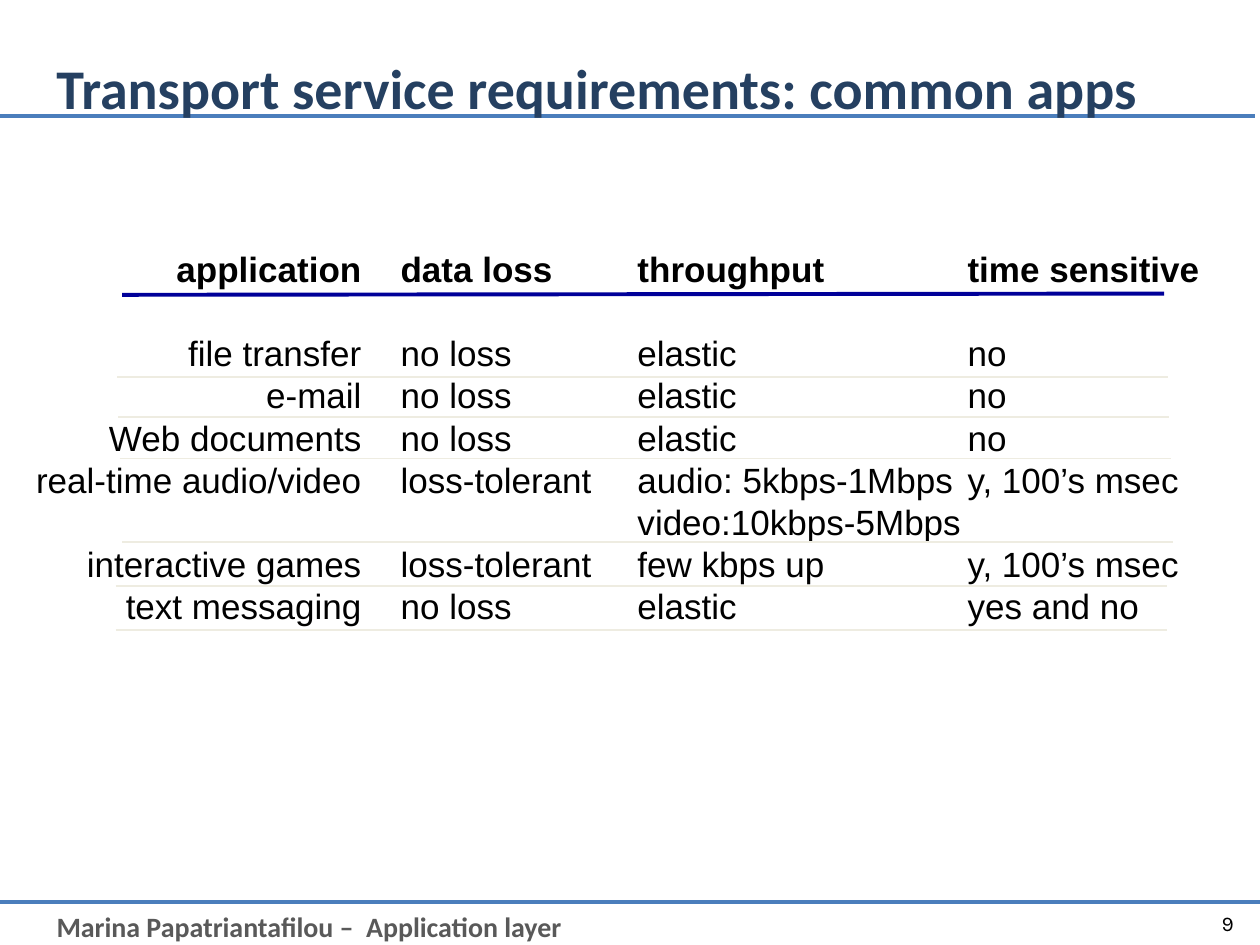
from dataclasses import dataclass

from lxml import etree
from pptx import Presentation
from pptx.dml.color import RGBColor
from pptx.enum.shapes import MSO_CONNECTOR
from pptx.enum.text import MSO_ANCHOR, PP_ALIGN
from pptx.oxml.ns import qn
from pptx.util import Inches, Pt

LEFT, RIGHT = PP_ALIGN.LEFT, PP_ALIGN.RIGHT
TOP, MIDDLE = MSO_ANCHOR.TOP, MSO_ANCHOR.MIDDLE
STRAIGHT = MSO_CONNECTOR.STRAIGHT
NO_STYLE_NO_GRID = "{2D5ABB26-0587-4C30-8999-92F81FD0307C}"

BLACK, TITLE_BLUE, FOOTER_GRAY = "000000", "254061", "595959"
FRAME_BLUE, HEADER_BLUE, ROW_BEIGE = "4B7EBC", "000099", "EEECE1"

LINE_PITCH = 24  # points per line of table text
TABLE_TOP = 1.97
COLUMN_EDGES = [0.16, 3.18, 5.06, 7.68, 9.85]
APPLICATION_GAP = 0.31  # between the right-aligned names and the next column


@dataclass(frozen=True)
class Requirement:
    application: str
    data_loss: str
    throughput: str
    time_sensitive: str
    lines: int = 1

    def cells(self) -> list[str]:
        return [self.application, self.data_loss, self.throughput, self.time_sensitive]


@dataclass(frozen=True)
class Rule:
    x: float
    y: float
    length: float
    color: str
    weight: float
    rise: float = 0


REQUIREMENTS = [
    Requirement("application", "data loss", "throughput", "time sensitive", lines=2),
    Requirement("file transfer", "no loss", "elastic", "no"),
    Requirement("e-mail", "no loss", "elastic", "no"),
    Requirement("Web documents", "no loss", "elastic", "no"),
    Requirement("real-time audio/video", "loss-tolerant",
                "audio: 5kbps-1Mbps\nvideo:10kbps-5Mbps", "y, 100’s msec", lines=2),
    Requirement("interactive games", "loss-tolerant", "few kbps up", "y, 100’s msec"),
    Requirement("text messaging", "no loss", "elastic", "yes and no"),
]

FRAME_RULES = [Rule(0, 7.16, 10, FRAME_BLUE, 2.25), Rule(-0.04, 0.92, 10, FRAME_BLUE, 2.25)]
TABLE_RULES = [Rule(0.97, 2.34, 8.27, HEADER_BLUE, 2.25, rise=0.01)] + [
    Rule(x, y, 8.34, ROW_BEIGE, 1)
    for x, y in [(0.93, 2.99), (0.94, 3.31), (0.95, 3.64), (0.97, 4.3), (0.92, 4.65), (0.92, 5)]
]


def rgb(color: str) -> RGBColor:
    return RGBColor.from_string(color)


def write_text(frame, text: str, *, size: float, font: str = "Arial", color: str = BLACK,
               bold: bool = False, align=LEFT, pitch: float | None = None) -> None:
    """Fill a text frame, one paragraph for each line of the text."""
    frame.word_wrap = True
    for index, line in enumerate(text.split("\n")):
        paragraph = frame.add_paragraph() if index else frame.paragraphs[0]
        paragraph.alignment = align
        if pitch:
            paragraph.line_spacing = Pt(pitch)
        run = paragraph.add_run()
        run.text = line
        run.font.name, run.font.size, run.font.bold = font, Pt(size), bold
        run.font.color.rgb = rgb(color)


def add_label(slide, text: str, x: float, y: float, width: float, height: float,
              *, anchor=TOP, **text_format) -> None:
    frame = slide.shapes.add_textbox(Inches(x), Inches(y), Inches(width), Inches(height)).text_frame
    frame.vertical_anchor = anchor
    write_text(frame, text, **text_format)


def add_rule(slide, rule: Rule) -> None:
    line = slide.shapes.add_connector(
        STRAIGHT, Inches(rule.x), Inches(rule.y),
        Inches(rule.x + rule.length), Inches(rule.y - rule.rise))
    line.line.color.rgb = rgb(rule.color)
    line.line.width = Pt(rule.weight)
    etree.SubElement(line._element.spPr, qn("a:effectLst"))


def add_requirements(slide, requirements: list[Requirement]) -> None:
    total_lines = sum(requirement.lines for requirement in requirements)
    table = slide.shapes.add_table(
        len(requirements), len(COLUMN_EDGES) - 1,
        Inches(COLUMN_EDGES[0]), Inches(TABLE_TOP),
        Inches(COLUMN_EDGES[-1] - COLUMN_EDGES[0]), Pt(LINE_PITCH * total_lines)).table
    table.first_row = table.horz_banding = False
    table._tbl.tblPr.find(qn("a:tableStyleId")).text = NO_STYLE_NO_GRID

    for column, start, end in zip(table.columns, COLUMN_EDGES, COLUMN_EDGES[1:]):
        column.width = Inches(end - start)
    for row_index, (row, requirement) in enumerate(zip(table.rows, requirements)):
        row.height = Pt(LINE_PITCH * requirement.lines)
        for column_index, (cell, text) in enumerate(zip(row.cells, requirement.cells())):
            is_name = column_index == 0
            cell.fill.background()
            cell.vertical_anchor = TOP
            cell.margin_left = cell.margin_top = cell.margin_bottom = 0
            cell.margin_right = Inches(APPLICATION_GAP if is_name else 0)
            write_text(cell.text_frame, text, size=20, bold=row_index == 0,
                       align=RIGHT if is_name else LEFT, pitch=LINE_PITCH)


def main() -> None:
    presentation = Presentation()
    presentation.slide_width, presentation.slide_height = Inches(10), Inches(7.5)
    slide = presentation.slides.add_slide(presentation.slide_layouts[6])

    for rule in FRAME_RULES:
        add_rule(slide, rule)
    add_label(slide, "Marina Papatriantafilou –  Application layer", 0.35, 7.17, 9.25, 0.64,
              size=16, font="Calibri", color=FOOTER_GRAY, bold=True)
    add_label(slide, "9", 9.09, 7.13, 0.8, 0.4, size=12, font="Karla", align=RIGHT, anchor=MIDDLE)
    add_label(slide, "Transport service requirements: common apps", 0.35, 0.25, 8.97, 0.89,
              size=32, font="Calibri", color=TITLE_BLUE, bold=True, anchor=MIDDLE)
    add_requirements(slide, REQUIREMENTS)
    for rule in TABLE_RULES:
        add_rule(slide, rule)

    presentation.save("out.pptx")


if __name__ == "__main__":
    main()
